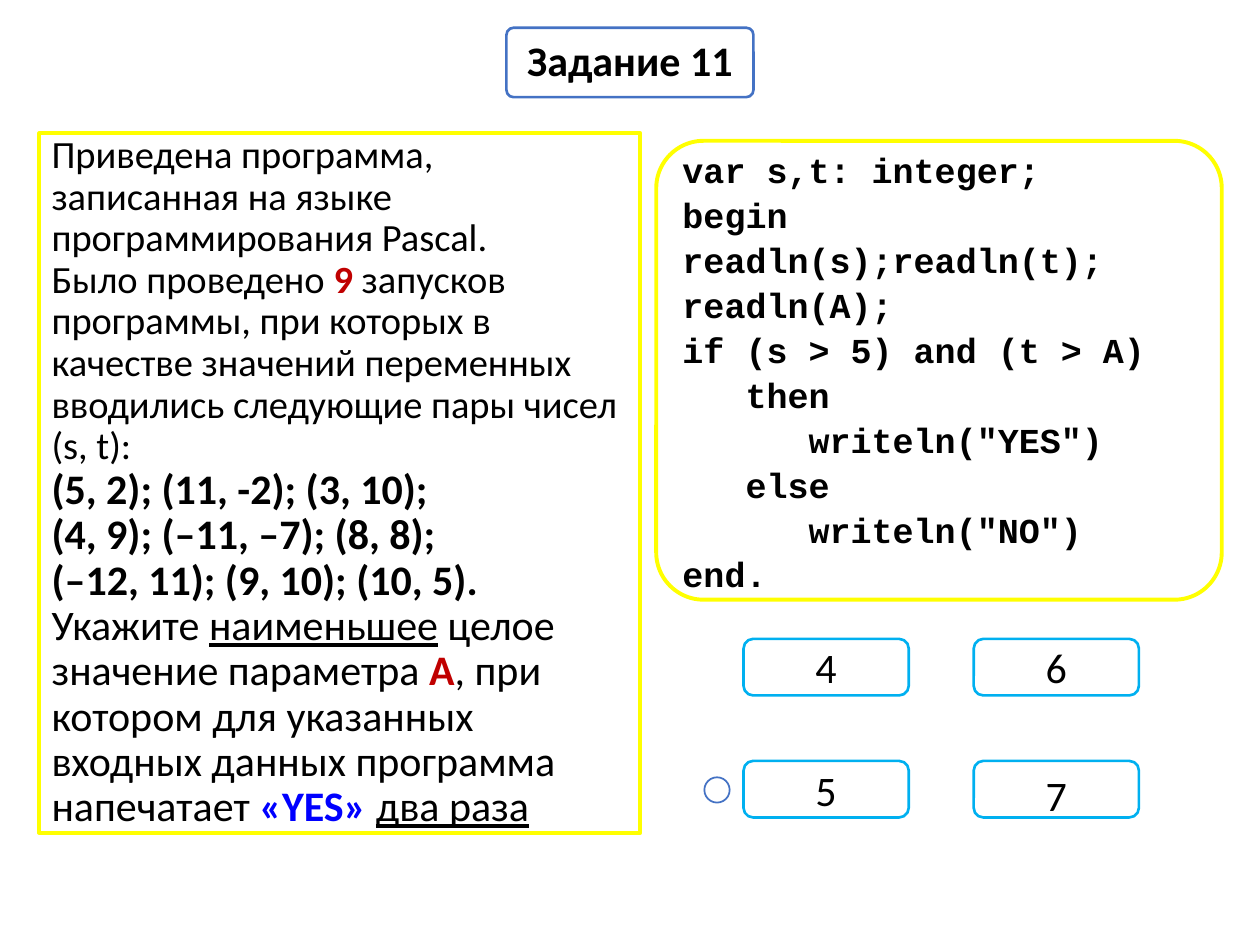
from dataclasses import dataclass

from pptx import Presentation, util as u
from pptx.dml.color import RGBColor
from pptx.enum import shapes, text

BLACK = RGBColor(0x00, 0x00, 0x00)
WHITE = RGBColor(0xFF, 0xFF, 0xFF)
RED = RGBColor(0xC0, 0x00, 0x00)
BLUE = RGBColor(0x00, 0x00, 0xFF)
NAVY = RGBColor(0x44, 0x72, 0xC4)
YELLOW = RGBColor(0xFF, 0xFF, 0x00)
CYAN = RGBColor(0x00, 0xB0, 0xF0)

KIND = shapes.MSO_SHAPE
LEFT, CENTER = text.PP_ALIGN.LEFT, text.PP_ALIGN.CENTER


@dataclass(frozen=True)
class Box:
    left: float
    top: float
    width: float
    height: float
    line: RGBColor
    weight: float
    kind: int = KIND.ROUNDED_RECTANGLE
    round: float = 0.103


@dataclass(frozen=True)
class Run:
    words: str
    size: float = 24
    color: RGBColor = BLACK
    bold: bool = False
    under: bool = False


@dataclass(frozen=True)
class Answer:
    words: str
    col: int
    row: int
    gap: float = 1.0


TITLE = Box(10.21, 0.56, 4.98, 1.4, NAVY, 1.5)
TASK = Box(0.79, 2.69, 12.12, 14.1, YELLOW, 2.25, KIND.RECTANGLE)
CODE = Box(13.23, 2.84, 11.4, 9.25, YELLOW, 2.25)
MARK = Box(14.2, 15.67, 0.51, 0.51, NAVY, 1, KIND.OVAL)

TASK_RUNS = [
    Run("Приведена программа, записанная на языке программирования Pascal.\n"
        "Было проведено ", 22),
    Run("9", 22, RED, True),
    Run(" запусков программы, при которых в качестве значений переменных "
        "вводились следующие пары чисел (s, t):\n", 22),
    Run("(5, 2); (11, -2); (3, 10);\n(4, 9); (–11, –7); (8, 8);\n"
        "(–12, 11); (9, 10); (10, 5).\n", bold=True),
    Run("Укажите "),
    Run("наименьшее", under=True),
    Run(" целое значение параметра "),
    Run("А", color=RED, bold=True),
    Run(", при котором для указанных входных данных программа напечатает "),
    Run("«YES» ", color=BLUE, bold=True),
    Run("два раза", under=True),
]

CODE_TEXT = """var s,t: integer;
begin
readln(s);readln(t);
readln(A);
if (s > 5) and (t > А)
   then
      writeln("YES")
   else
      writeln("NO")
end."""

ANSWERS = [Answer("5", 0, 1), Answer("4", 0, 0), Answer("7", 1, 1, 1.2), Answer("6", 1, 0)]


def draw(slide, box: Box):
    shape = slide.shapes.add_shape(
        box.kind, u.Cm(box.left), u.Cm(box.top), u.Cm(box.width), u.Cm(box.height))
    shape.shadow.inherit = False
    shape.fill.solid()
    shape.fill.fore_color.rgb = WHITE
    shape.line.color.rgb = box.line
    shape.line.width = u.Pt(box.weight)
    if box.kind == KIND.ROUNDED_RECTANGLE:
        shape.adjustments[0] = box.round
    return shape


def write(shape, paras: list[list[Run]], *, face: str = "Calibri",
          align=CENTER, gap: float = 1.0) -> None:
    frame = shape.text_frame
    frame.word_wrap = True
    frame.vertical_anchor = text.MSO_ANCHOR.MIDDLE
    for num, runs in enumerate(paras):
        para = frame.add_paragraph() if num else frame.paragraphs[0]
        para.alignment = align
        para.line_spacing = gap
        for run in runs:
            for row, words in enumerate(run.words.split("\n")):
                if row:
                    para.add_line_break()
                if not words:
                    continue
                piece = para.add_run()
                piece.text = words
                font = piece.font
                font.name = face
                font.size = u.Pt(run.size)
                font.bold = run.bold
                font.underline = run.under
                font.color.rgb = run.color


def main() -> None:
    deck = Presentation()
    deck.slide_width, deck.slide_height = u.Cm(25.4), u.Cm(19.05)
    slide = deck.slides.add_slide(deck.slide_layouts[6])

    write(draw(slide, TITLE), [[Run("Задание 11", bold=True)]], gap=0.9)
    write(draw(slide, TASK), [TASK_RUNS], align=LEFT, gap=0.9)
    for item in ANSWERS:
        box = Box(14.99 + 4.64 * item.col, 12.88 + 2.46 * item.row,
                  3.33, 1.14, CYAN, 1.5, round=0.17)
        write(draw(slide, box), [[Run(item.words)]], gap=item.gap)
    draw(slide, MARK)
    lines = [[Run(line, 20, bold=True)] for line in CODE_TEXT.split("\n")]
    write(draw(slide, CODE), lines, face="Courier New", align=LEFT, gap=1.07)

    deck.save("out.pptx")


if __name__ == "__main__":
    main()
